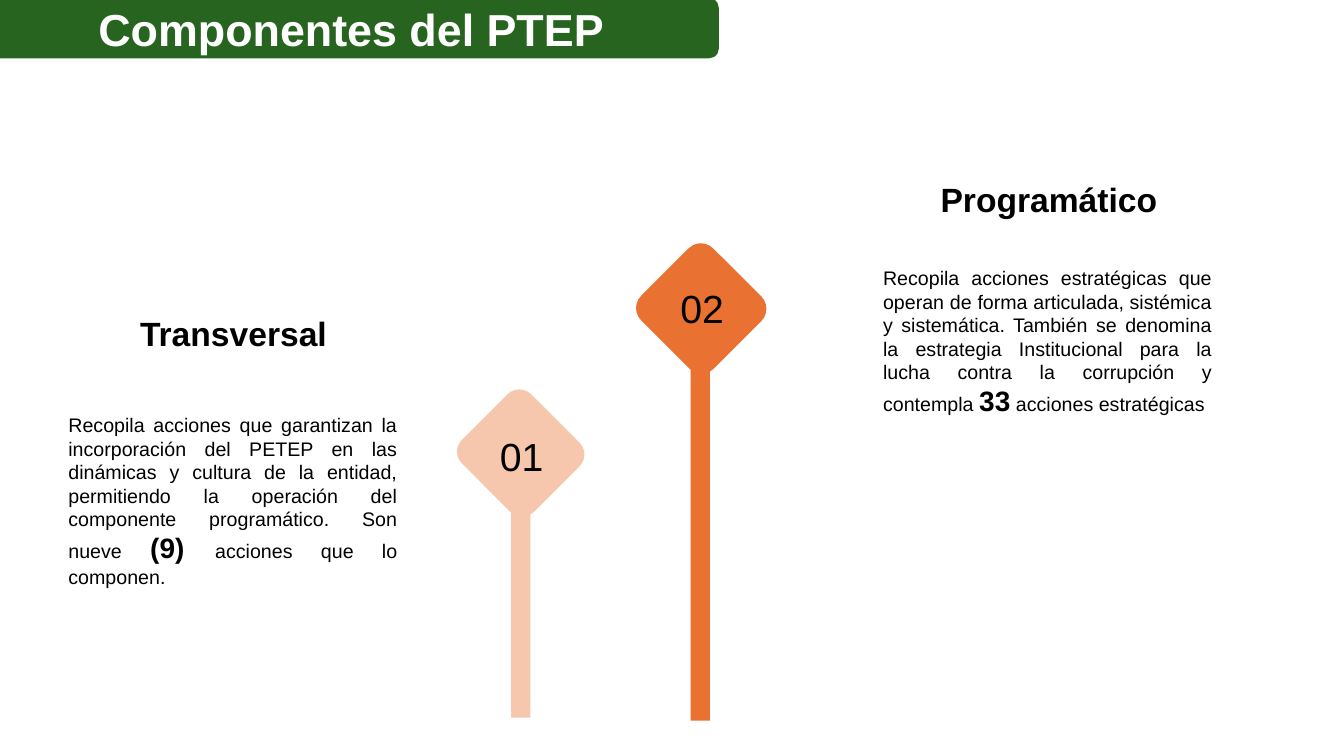
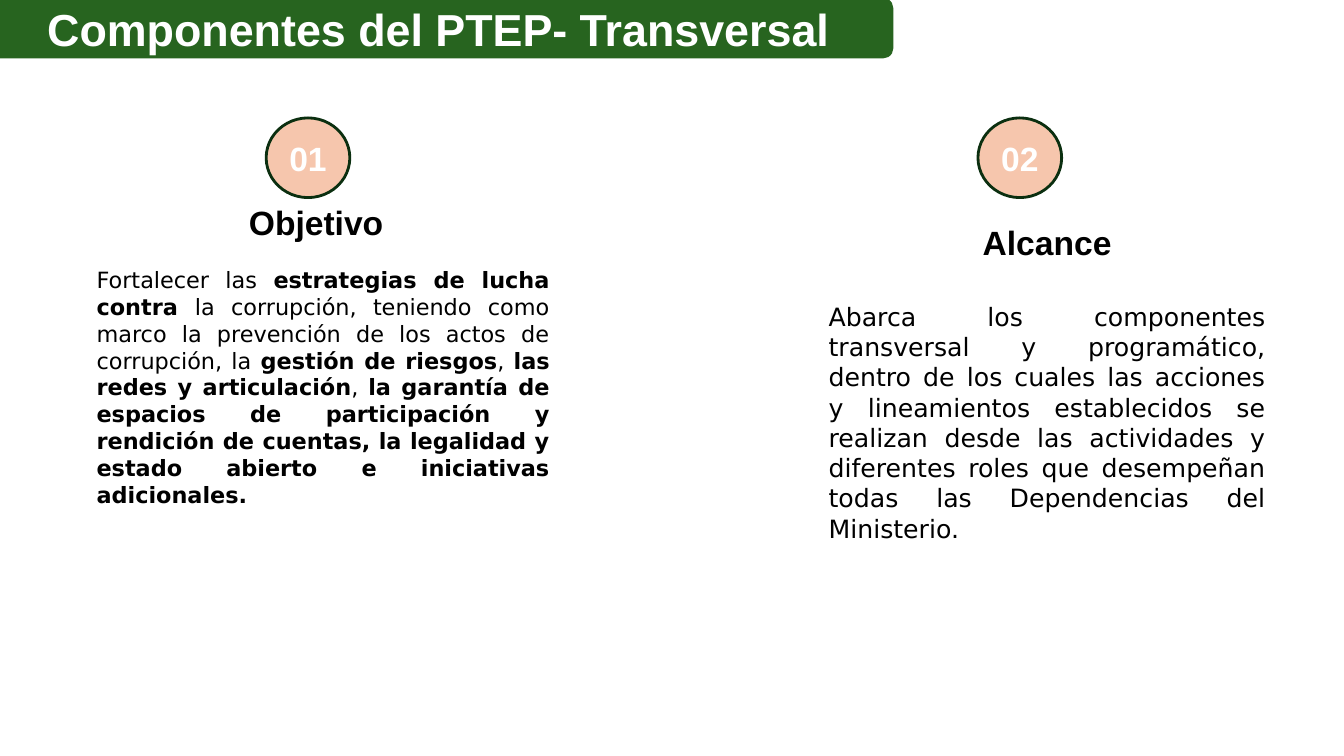
from pptx import Presentation
from pptx.dml.color import RGBColor
from pptx.enum.shapes import MSO_SHAPE
from pptx.enum.text import MSO_ANCHOR, MSO_AUTO_SIZE, PP_ALIGN
from pptx.util import Pt

PIXEL = 9144
TITLE_ONLY = 5
ROUNDED = MSO_SHAPE.ROUNDED_RECTANGLE
RECTANGLE = MSO_SHAPE.RECTANGLE
OVAL = MSO_SHAPE.OVAL
MIDDLE = MSO_ANCHOR.MIDDLE
LEFT, CENTER, JUSTIFY = PP_ALIGN.LEFT, PP_ALIGN.CENTER, PP_ALIGN.JUSTIFY

GREEN, DARK_GREEN = "27641F", "0B2F10"
ORANGE, PEACH = "E97132", "F6C6AD"
BLACK, WHITE = "000000", "FFFFFF"

HEADING = {"size": Pt(24), "name": "Arial", "bold": True}
TITLE = {**HEADING, "size": Pt(32)}
NUMBER = {"size": Pt(28), "name": "Arial", "bold": False}
BODY = {"size": Pt(14), "name": "Arial", "bold": False}
FIGURE = {**BODY, "size": Pt(20), "bold": True}
OBJECTIVE = {"size": Pt(16), "name": "DejaVu Sans", "bold": False}
OBJECTIVE_STRONG = {**OBJECTIVE, "bold": True}
SCOPE = {**OBJECTIVE, "size": Pt(18)}


def px(*lengths):
    return [length * PIXEL for length in lengths]


def rgb(color):
    return RGBColor.from_string(color)


def apply_format(target, values):
    for name, value in values.items():
        setattr(target, name, value)


def write(paragraph, parts, style, strong=None, align=LEFT, color=BLACK):
    paragraph.alignment = align
    for index, text in enumerate(parts):
        run = paragraph.add_run()
        run.text = text
        apply_format(run.font, strong if index % 2 else style)
        run.font.color.rgb = rgb(color)


def add_block(shapes, kind, box, fill, line=None):
    shape = shapes.add_shape(kind, *px(*box))
    shape.shadow.inherit = False
    shape.fill.solid()
    shape.fill.fore_color.rgb = rgb(fill)
    if line:
        shape.line.color.rgb = rgb(line)
        shape.line.width = Pt(2)
    else:
        shape.line.fill.background()
    return shape


def add_text(shapes, box, parts, style, strong=None, align=LEFT):
    frame = shapes.add_textbox(*px(*box)).text_frame
    apply_format(frame, {"word_wrap": True, "auto_size": MSO_AUTO_SIZE.SHAPE_TO_FIT_TEXT})
    write(frame.paragraphs[0], parts, style, strong, align)
    return frame


def add_titled_slide(presentation, text, width):
    slide = presentation.slides.add_slide(presentation.slide_layouts[TITLE_ONLY])
    box = (-16, -2, width, 60)
    title = slide.shapes.title
    apply_format(title, dict(zip(("left", "top", "width", "height"), px(*box))))
    apply_format(title.text_frame, {"vertical_anchor": MIDDLE, "word_wrap": True,
                                    "auto_size": MSO_AUTO_SIZE.NONE})
    write(title.text_frame.paragraphs[0], [text], TITLE, align=CENTER, color=WHITE)
    band = add_block(slide.shapes, ROUNDED, box, GREEN)
    title._element.addprevious(band._element)
    return slide


def add_sign(slide, number, color, diamond_box, post_box, number_box):
    shapes = slide.shapes.add_group_shape().shapes
    diamond = add_block(shapes, ROUNDED, diamond_box, color)
    diamond.rotation = 315
    diamond.adjustments[0] = 0.17
    add_block(shapes, RECTANGLE, post_box, color)
    add_text(shapes, number_box, [number], NUMBER)


def add_badge(slide, number, left):
    badge = add_block(slide.shapes, OVAL, (left, 117, 83, 79), PEACH, DARK_GREEN)
    badge.text_frame.vertical_anchor = MIDDLE
    write(badge.text_frame.paragraphs[0], [number], HEADING, align=CENTER, color=WHITE)


def build_components(presentation):
    slide = add_titled_slide(presentation, "Componentes del PTEP", 729)
    add_sign(slide, "02", ORANGE, (645, 255, 101, 102), (685, 362, 19, 353), (665, 277, 80, 57))
    add_sign(slide, "01", PEACH, (468, 399, 97, 101), (507, 493, 19, 219), (486, 424, 80, 49))
    add_text(slide.shapes, (44, 306, 375, 50), ["Transversal"], HEADING, align=CENTER)
    add_text(slide.shapes, (923, 173, 375, 50), ["Programático"], HEADING)
    add_text(slide.shapes, (58, 405, 346, 185), [
        "Recopila acciones que garantizan la incorporación del PETEP en las dinámicas y cultura "
        "de la entidad, permitiendo la operación del componente programático. Son nueve ",
        "(9) ",
        "acciones que lo componen.",
    ], BODY, FIGURE, JUSTIFY)
    add_text(slide.shapes, (866, 259, 346, 162), [
        "Recopila acciones estratégicas que operan de forma articulada, sistémica y sistemática. "
        "También se denomina la estrategia Institucional para la lucha contra la corrupción y contempla ",
        "33",
        " acciones estratégicas",
    ], BODY, FIGURE, JUSTIFY)


def build_transversal(presentation):
    slide = add_titled_slide(presentation, "Componentes del PTEP- Transversal", 902)
    add_badge(slide, "01", 264)
    add_text(slide.shapes, (237, 195, 168, 50), ["Objetivo"], HEADING)
    add_text(slide.shapes, (86, 259, 469, 252), [
        "Fortalecer las ",
        "estrategias de lucha contra ",
        "la corrupción, teniendo como marco la prevención de los actos de corrupción, la ",
        "gestión de riesgos",
        ", ",
        "las redes y articulación",
        ", ",
        "la garantía de espacios de participación y rendición de cuentas, la legalidad y estado "
        "abierto e iniciativas adicionales.",
    ], OBJECTIVE, OBJECTIVE_STRONG, JUSTIFY)
    add_badge(slide, "02", 970)
    frame = add_text(slide.shapes, (812, 215, 453, 374), ["Alcance"], HEADING, align=CENTER)
    scope = frame.add_paragraph()
    scope.space_before = Pt(28)
    write(scope, [
        "Abarca los componentes transversal y programático, dentro de los cuales las acciones y "
        "lineamientos establecidos se realizan desde las actividades y diferentes roles que "
        "desempeñan todas las Dependencias del Ministerio.",
    ], SCOPE, align=JUSTIFY)


def main():
    presentation = Presentation()
    presentation.slide_width, presentation.slide_height = px(1333, 750)
    build_components(presentation)
    build_transversal(presentation)
    presentation.save("out.pptx")


if __name__ == "__main__":
    main()
